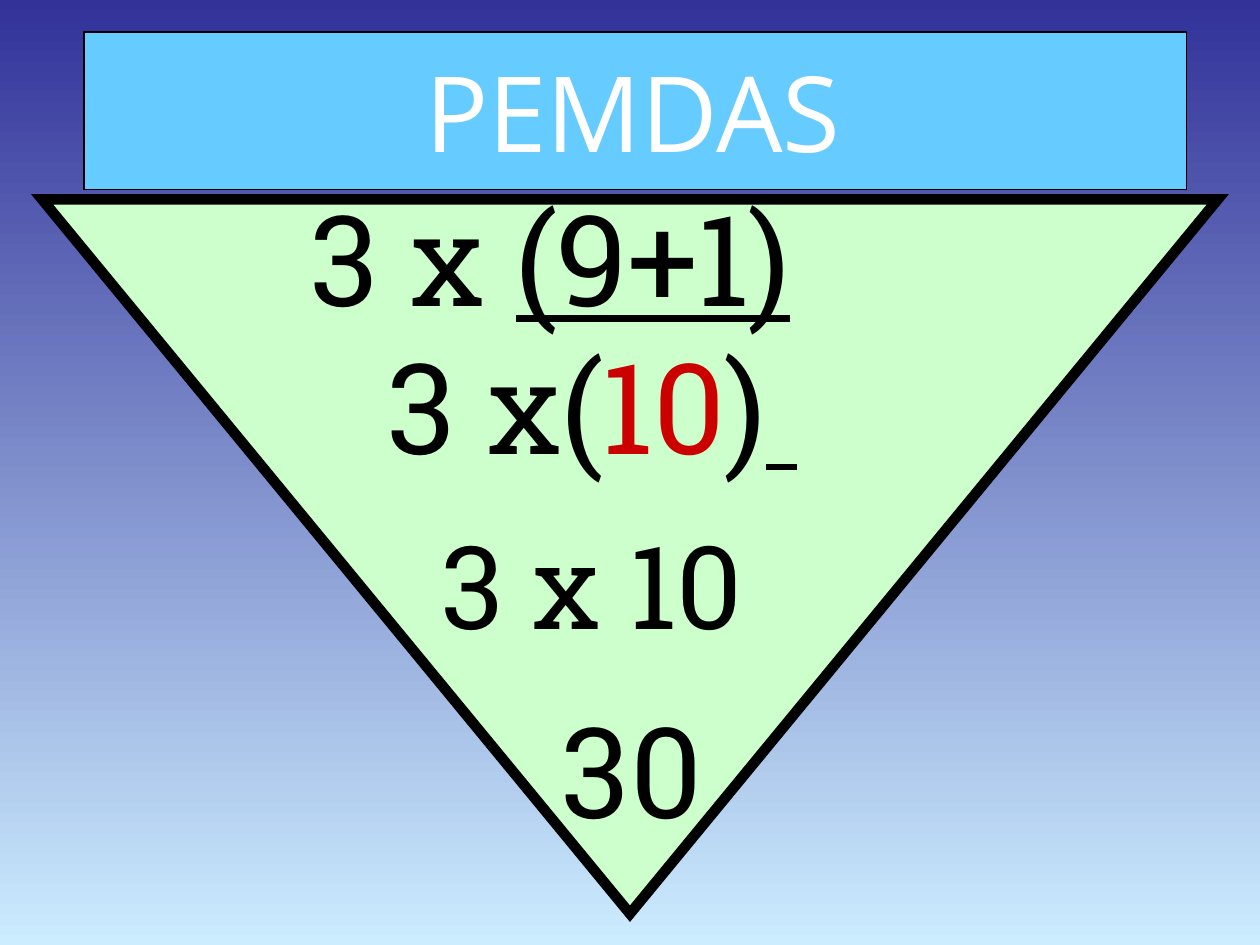
from lxml.etree import SubElement
from pptx import Presentation
from pptx.dml.color import RGBColor
from pptx.enum.text import MSO_ANCHOR as Anchor, PP_ALIGN as Align
from pptx.oxml.ns import qn
from pptx.util import Cm, Pt

BLACK, RED, WHITE = "000000", "CC0000", "FFFFFF"
STEPS = [
    ((6.17, 3.63, 15.67, 3.18), 72, [("3 x ", BLACK, False), ("(9+1)", BLACK, True)]),
    ((7.72, 6.63, 16.54, 3.18), 72, [("3 x(", BLACK, False), ("10", RED, False),
                                     (")", BLACK, False), (" ", BLACK, True)]),
    ((8.81, 10.36, 8.05, 2.97), 66, [("3 x 10", BLACK, False)]),
    ((11.23, 13.97, 3.61, 3.18), 72, [("30", BLACK, False)]),
]


def color(value):
    """Turn a hex string into a colour."""
    return RGBColor.from_string(value)


def assign(target, values):
    """Set each attribute named in the dict on the target."""
    for name, value in values.items():
        setattr(target, name, value)


def place(shape, box):
    """Move and size a shape to a box given in centimetres."""
    assign(shape, dict(zip(("left", "top", "width", "height"), map(Cm, box))))


def paint(shape, fill, width):
    """Give a shape a solid fill and a black outline."""
    shape.fill.solid()
    shape.fill.fore_color.rgb = color(fill)
    shape.line.color.rgb = color(BLACK)
    shape.line.width = Pt(width)


def set_frame(frame, margins, anchor):
    """Set the insets, wrapping and anchor of a text frame."""
    sides = ("margin_left", "margin_top", "margin_right", "margin_bottom")
    assign(frame, dict(zip(sides, map(Cm, margins))))
    assign(frame, {"word_wrap": True, "vertical_anchor": anchor})


def add_span(para, text, font, size, ink, underline=False):
    """Append a formatted run to a paragraph."""
    span = para.add_run()
    span.text = text
    assign(span.font, {"name": font, "size": Pt(size), "underline": underline})
    span.font.color.rgb = color(ink)


def paint_background(page):
    """Fill the page with a gradient from dark blue down to pale blue."""
    fill = page.background.fill
    fill.gradient()
    fill.gradient_angle = 270
    for stop, (position, value) in zip(fill.gradient_stops, ((0, "323299"), (1, "CCECFF"))):
        stop.position = position
        stop.color.rgb = color(value)


def fill_title(page, box, text):
    """Format the title placeholder as a banner."""
    title = page.shapes.title
    place(title, box)
    paint(title, "66CCFF", 1)
    set_frame(title.text_frame, (0.25, 0.15, 0.35, 0.15), Anchor.MIDDLE)
    para = title.text_frame.paragraphs[0]
    para.alignment = Align.CENTER
    add_span(para, text, "Open Sans", 60, WHITE)


def add_triangle(page, box):
    """Draw a triangle that points down and fills the box."""
    left, top, width, height = map(Cm, box)
    builder = page.shapes.build_freeform(left, top)
    builder.add_line_segments([(left + width, top), (left + width // 2, top + height)])
    triangle = builder.convert_to_shape()
    triangle.shadow.inherit = False
    paint(triangle, "CCFFCC", 6)
    SubElement(triangle.line._get_or_add_ln(), qn("a:miter"), lim="800000")


def add_step(page, box, size, spans):
    """Write one line of the calculation."""
    step = page.shapes.add_textbox(*map(Cm, box))
    set_frame(step.text_frame, (0.1, 0, 0.1, 0), Anchor.TOP)
    for text, ink, underline in spans:
        add_span(step.text_frame.paragraphs[0], text, "Roboto Slab", size, ink, underline)


def main():
    """Build the deck and save it."""
    deck = Presentation()
    assign(deck, {"slide_width": Cm(25.4), "slide_height": Cm(19.05)})
    page = deck.slides.add_slide(deck.slide_layouts[5])
    paint_background(page)
    fill_title(page, (1.69, 0.64, 22.23, 3.18), "PEMDAS")
    add_triangle(page, (0.85, 4.02, 23.7, 14.4))
    for box, size, spans in STEPS:
        add_step(page, box, size, spans)
    deck.save("out.pptx")


if __name__ == "__main__":
    main()
